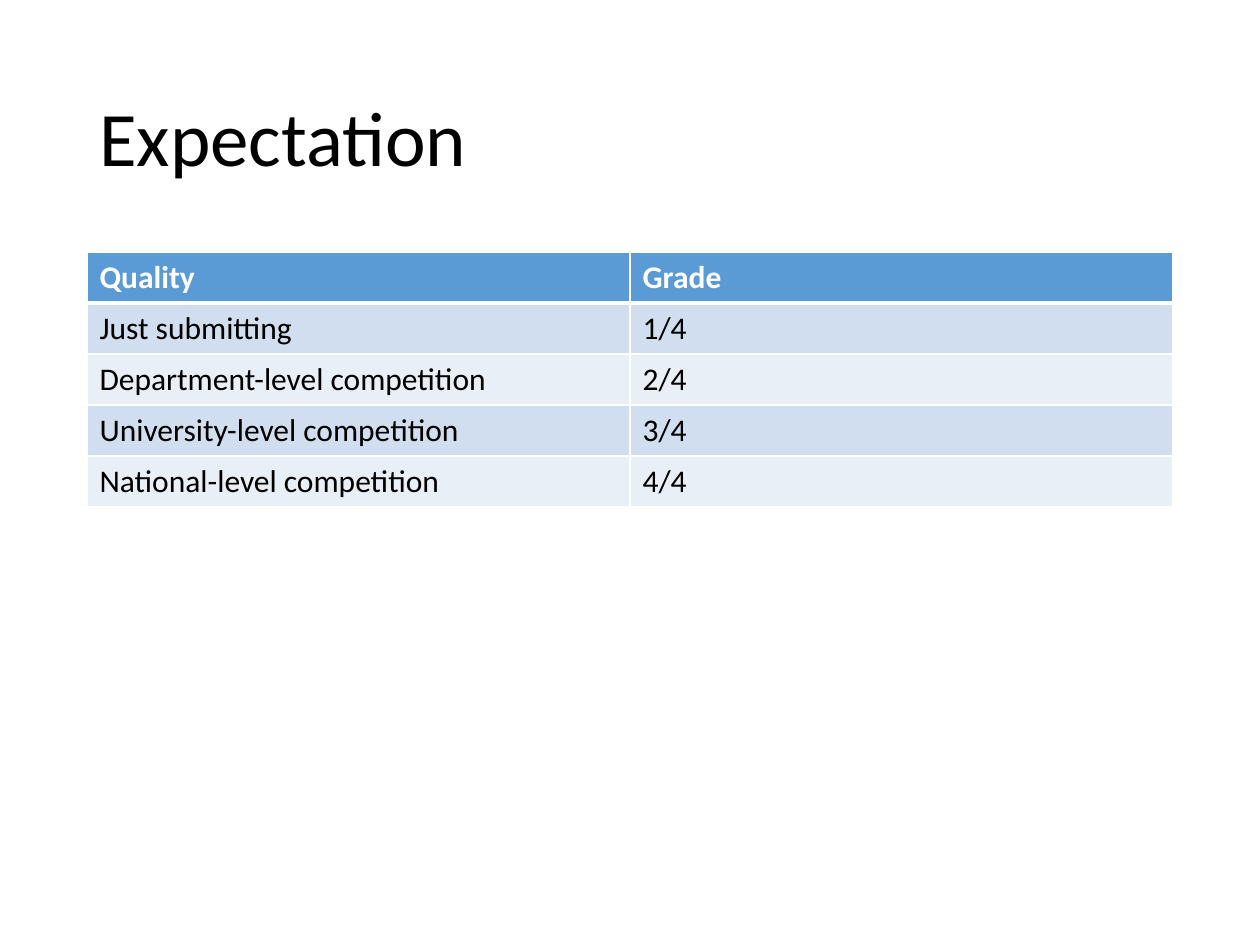
from lxml.etree import SubElement
from pptx import Presentation
from pptx.dml.color import RGBColor
from pptx.enum.text import MSO_ANCHOR as Anchor
from pptx.oxml.ns import qn
from pptx.util import Pt

PX = 914400 / 126
FONT = "Calibri"
WHITE, BLACK, BLUE = "FFFFFF", "000000", "5B9BD5"
BANDS = ("D1DEEF", "E9EFF7")
THIN, THICK = 0.96, 3
ROWS = [
    ("Quality", "Grade"),
    ("Just submitting", "1/4"),
    ("Department-level competition", "2/4"),
    ("University-level competition", "3/4"),
    ("National-level competition", "4/4"),
]


def px(n):
    """Turn pixels into EMU."""
    return round(n * PX)


def rgb(value):
    """Turn a hex string into a colour."""
    return RGBColor.from_string(value)


def style(p, size, color, bold=False):
    """Set the font of a whole paragraph."""
    p.font.name, p.font.size, p.font.bold = FONT, Pt(size), bold
    p.font.color.rgb = rgb(color)


def border(cell, side, width):
    """Draw one white edge of a cell."""
    ln = SubElement(cell._tc.get_or_add_tcPr(), qn(f"a:ln{side}"), w=str(Pt(width)))
    SubElement(SubElement(ln, qn("a:solidFill")), qn("a:srgbClr"), val=WHITE)


def add_title(s, x, y, w, h, text):
    """Place the slide title, centred vertically in its box."""
    tf = s.shapes.add_textbox(px(x), px(y), px(w), px(h)).text_frame
    tf.word_wrap = True
    tf.vertical_anchor = Anchor.MIDDLE
    p = tf.paragraphs[0]
    p.text, p.line_spacing = text, 0.9
    style(p, 44, BLACK)


def add_grades(s, x, y, w, h, rows):
    """Place the table with a header row and banded body rows."""
    table = s.shapes.add_table(len(rows), len(rows[0]), px(x), px(y), px(w), px(h)).table
    for i, row in enumerate(rows):
        header = i == 0
        fill = BLUE if header else BANDS[(i - 1) % 2]
        for j, text in enumerate(row):
            cell = table.cell(i, j)
            border(cell, "L", THIN)
            border(cell, "R", THIN)
            border(cell, "T", THICK if i == 1 else THIN)
            border(cell, "B", THICK if header else THIN)
            cell.fill.solid()
            cell.fill.fore_color.rgb = rgb(fill)
            cell.text = text
            style(cell.text_frame.paragraphs[0], 18, WHITE if header else BLACK, header)


def main():
    """Build and save the slide."""
    prs = Presentation()
    prs.slide_width, prs.slide_height = px(1260), px(945)
    s = prs.slides.add_slide(prs.slide_layouts[6])
    add_title(s, 87, 50, 1086, 183, "Expectation")
    add_grades(s, 87, 252, 1086, 255, ROWS)
    prs.save("out.pptx")


if __name__ == "__main__":
    main()
